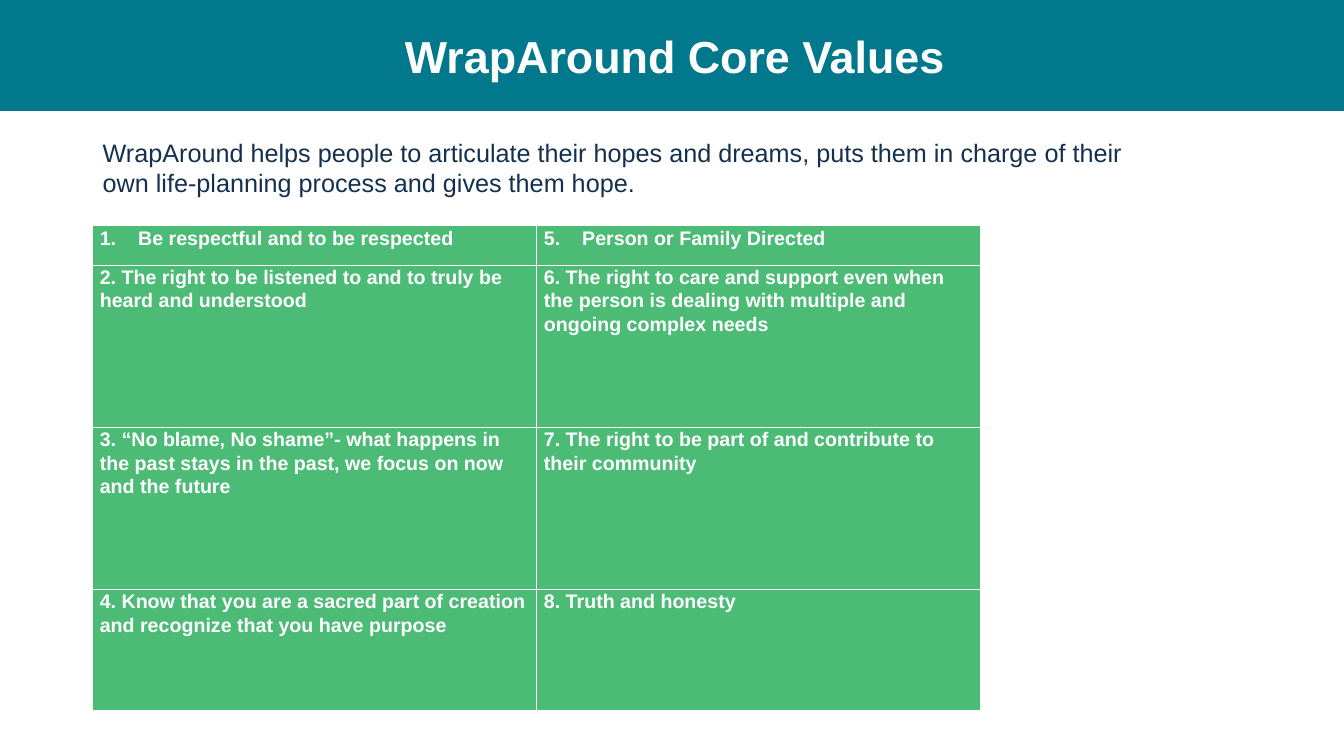
from dataclasses import dataclass

from lxml import etree
from pptx import Presentation
from pptx.dml.color import RGBColor
from pptx.enum import shapes, text
from pptx.oxml import ns
from pptx.util import Inches, Pt


@dataclass(frozen=True)
class Theme:
    font: str = "Arial"
    teal: str = "01788B"
    green: str = "4CBB75"
    navy: str = "14304E"
    white: str = "FFFFFF"
    title: int = 32
    body: int = 18
    cell: int = 14
    rule: int = 1


THEME = Theme()

INTRO = (
    "WrapAround helps people to articulate their hopes and dreams, puts them "
    "in charge of their own life-planning process and gives them hope."
)

HEADS = [
    (1, "Be respectful and to be respected"),
    (5, "Person or Family Directed"),
]
VALUES = [
    (
        "2. The right to be listened to and to truly be heard and understood",
        "6. The right to care and support even when the person is dealing "
        "with multiple and ongoing complex needs",
    ),
    (
        "3. “No blame, No shame”- what happens in the past stays in the past, "
        "we focus on now and the future",
        "7. The right to be part of and contribute to their community",
    ),
    (
        "4. Know that you are a sacred part of creation and recognize that "
        "you have purpose",
        "8. Truth and honesty",
    ),
]
HEIGHTS = [0.39, 1.61, 1.61, 1.2]


def color(code):
    return RGBColor.from_string(code)


def add_run(para, words, size, code, bold=False):
    run = para.add_run()
    run.text = words
    font = run.font
    font.name = THEME.font
    font.size = Pt(size)
    font.bold = bold
    font.color.rgb = color(code)


def add_band(slide, words):
    band = slide.shapes.add_shape(
        shapes.MSO_SHAPE.RECTANGLE,
        Inches(-0.09), Inches(0), Inches(13.57), Inches(1.1),
    )
    band.shadow.inherit = False
    band.fill.solid()
    band.fill.fore_color.rgb = color(THEME.teal)
    band.line.color.rgb = color(THEME.teal)
    band.line.width = Pt(THEME.rule)
    frame = band.text_frame
    frame.vertical_anchor = text.MSO_ANCHOR.MIDDLE
    para = frame.paragraphs[0]
    para.alignment = text.PP_ALIGN.CENTER
    add_run(para, words, THEME.title, THEME.white, True)


def add_intro(slide, words):
    box = slide.shapes.add_textbox(
        Inches(0.92), Inches(1.31), Inches(10.36), Inches(0.71)
    )
    frame = box.text_frame
    frame.word_wrap = True
    frame.auto_size = text.MSO_AUTO_SIZE.SHAPE_TO_FIT_TEXT
    add_run(frame.paragraphs[0], words, THEME.body, THEME.navy)


def set_edges(cell):
    """Draw a thin white line on all four sides of a cell."""
    props = cell._tc.get_or_add_tcPr()
    for i, side in enumerate(("lnL", "lnR", "lnT", "lnB")):
        line = etree.Element(ns.qn(f"a:{side}"), w=str(Pt(THEME.rule)))
        fill = etree.SubElement(line, ns.qn("a:solidFill"))
        etree.SubElement(fill, ns.qn("a:srgbClr"), val=THEME.white)
        props.insert(i, line)


def set_number(para, start):
    """Number a paragraph automatically, with a hanging indent."""
    props = para._p.get_or_add_pPr()
    props.set("marL", str(Inches(0.38)))
    props.set("indent", str(Inches(-0.38)))
    etree.SubElement(
        props, ns.qn("a:buAutoNum"), type="arabicPeriod", startAt=str(start)
    )


def fill_cell(cell, words, start=None):
    cell.margin_left = cell.margin_right = Inches(0.07)
    cell.margin_top = cell.margin_bottom = Inches(0)
    cell.fill.solid()
    cell.fill.fore_color.rgb = color(THEME.green)
    set_edges(cell)
    para = cell.text_frame.paragraphs[0]
    if start is not None:
        set_number(para, start)
    para.line_spacing = 1.07
    add_run(para, words, THEME.cell, THEME.white, True)


def add_values(slide):
    table = slide.shapes.add_table(
        len(HEIGHTS), len(HEADS),
        Inches(0.92), Inches(2.24), Inches(8.81), Inches(sum(HEIGHTS)),
    ).table
    table.horz_banding = False
    for row, height in zip(table.rows, HEIGHTS):
        row.height = Inches(height)
    for col, (start, words) in enumerate(HEADS):
        fill_cell(table.cell(0, col), words, start)
    for row, pair in enumerate(VALUES, 1):
        for col, words in enumerate(pair):
            fill_cell(table.cell(row, col), words)


def main():
    deck = Presentation()
    deck.slide_width = Inches(13.33)
    deck.slide_height = Inches(7.5)
    slide = deck.slides.add_slide(deck.slide_layouts[6])
    add_band(slide, "WrapAround Core Values")
    add_values(slide)
    add_intro(slide, INTRO)
    deck.save("out.pptx")


if __name__ == "__main__":
    main()
